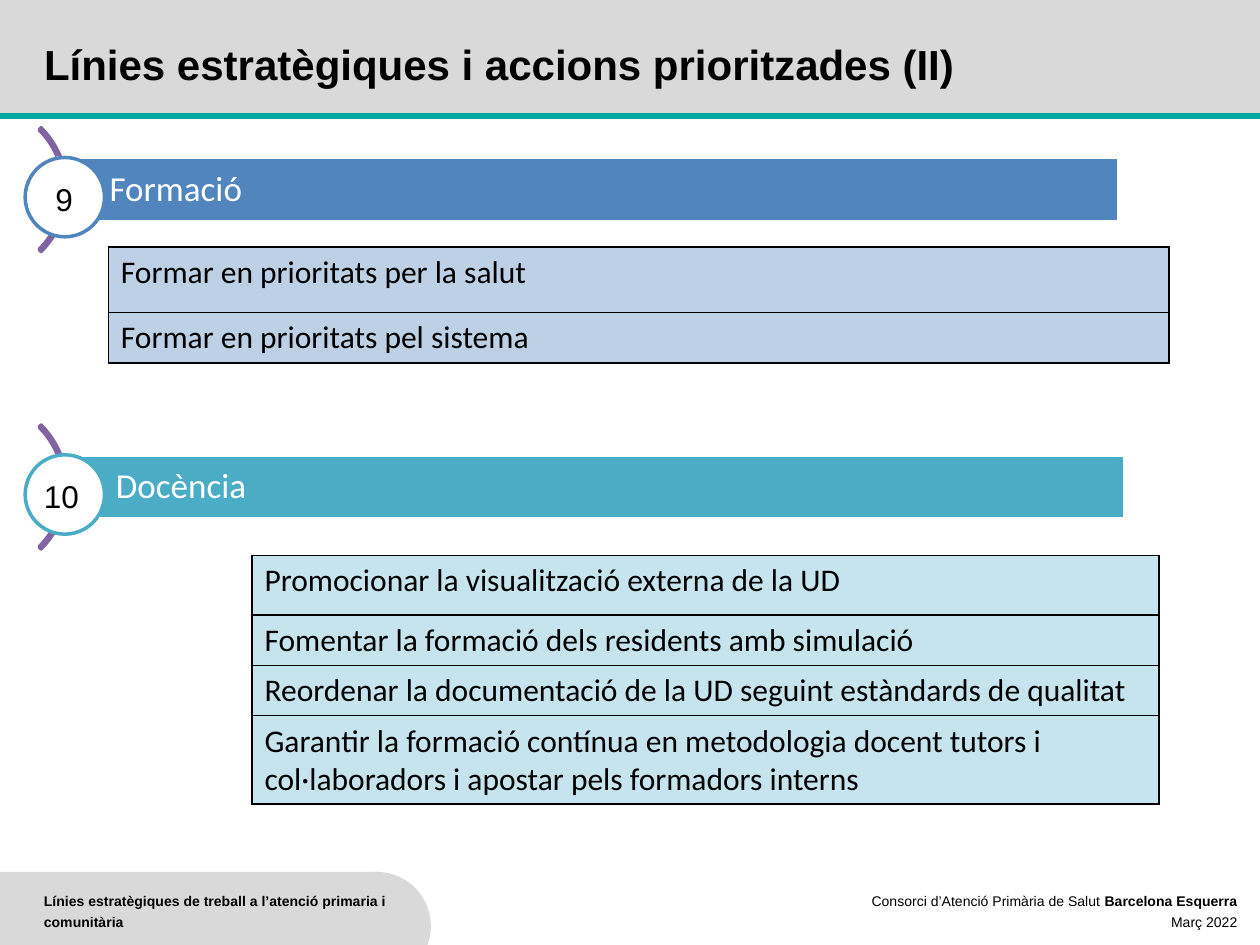
from lxml import etree
from pptx import Presentation
from pptx.dml.color import RGBColor
from pptx.enum.shapes import MSO_CONNECTOR, MSO_SHAPE
from pptx.enum.text import MSO_ANCHOR, MSO_AUTO_SIZE, PP_ALIGN
from pptx.oxml.ns import qn
from pptx.util import Inches, Pt

RECTANGLE, OVAL, BLOCK_ARC = MSO_SHAPE.RECTANGLE, MSO_SHAPE.OVAL, MSO_SHAPE.BLOCK_ARC
STRAIGHT = MSO_CONNECTOR.STRAIGHT
TOP, MIDDLE = MSO_ANCHOR.TOP, MSO_ANCHOR.MIDDLE
LEFT, RIGHT = PP_ALIGN.LEFT, PP_ALIGN.RIGHT

TITLE = "Línies estratègiques i accions prioritzades (II)"
FOOTER_LEFT = [[("Línies estratègiques de treball a l’atenció primaria i comunitària", True)]]
FOOTER_RIGHT = [
    [("Consorci d’Atenció Primària de Salut ", False), ("Barcelona Esquerra", True)],
    [("Març 2022", False)],
]
SECTIONS = [
    {
        "number": "9", "number_left": 0.34, "heading": "Formació",
        "color": "5185BD", "tint": "BCD0E6", "bar": (0.46, 1.25),
        "table": (0.86, 1.96, 8.42),
        "actions": [
            ("Formar en prioritats per la salut", 0.52),
            ("Formar en prioritats pel sistema", 0.4),
        ],
    },
    {
        "number": "10", "number_left": 0.25, "heading": "Docència",
        "color": "4BACC6", "tint": "C5E4ED", "bar": (0.51, 3.61),
        "table": (2, 4.41, 7.2),
        "actions": [
            ("Promocionar la visualització externa de la UD", 0.47),
            ("Fomentar la formació dels residents amb simulació", 0.4),
            ("Reordenar la documentació de la UD seguint estàndards de qualitat", 0.4),
            ("Garantir la formació contínua en metodologia docent tutors i "
             "col·laboradors i apostar pels formadors interns", 0.7),
        ],
    },
]
THEME = {
    "gray": "D9D9D9", "teal": "00AA9E", "purple": "8064A2",
    "white": "FFFFFF", "black": "000000",
    "base_font": "Arial", "body_font": "Calibri",
    "title": 24, "heading": 20, "body": 18, "footer": 8,
}
BAR_SIZE = (8.42, 0.51)
CIRCLE_LEFT, CIRCLE_SIZE = 0.2, 0.63
ARC_LEFT, ARC_RISE, ARC_SIZE = -0.86, 0.44, 1.39


def rgb(color):
    return RGBColor.from_string(color)


def inches(*lengths):
    return [Inches(length) for length in lengths]


def style_run(run, size, font, color=THEME["black"], bold=False):
    run.font.size = Pt(size)
    run.font.name = font
    run.font.color.rgb = rgb(color)
    run.font.bold = bold


def add_shape(slide, kind, box, fill=None, line=None):
    shape = slide.shapes.add_shape(kind, *inches(*box))
    shape.shadow.inherit = False
    if fill:
        shape.fill.solid()
        shape.fill.fore_color.rgb = rgb(fill)
    else:
        shape.fill.background()
    if line:
        shape.line.color.rgb = rgb(line)
        shape.line.width = Pt(2)
    else:
        shape.line.fill.background()
    return shape


def add_text(slide, box, paragraphs, size, alignment=LEFT, spacing=None):
    frame = slide.shapes.add_textbox(*inches(*box)).text_frame
    frame.word_wrap = True
    for index, parts in enumerate(paragraphs):
        paragraph = frame.add_paragraph() if index else frame.paragraphs[0]
        paragraph.alignment = alignment
        paragraph.line_spacing = spacing
        for text, bold in parts:
            run = paragraph.add_run()
            run.text = text
            style_run(run, size, THEME["base_font"], bold=bold)


def add_borders(cell):
    properties = cell._tc.get_or_add_tcPr()
    for index, side in enumerate(("a:lnL", "a:lnR", "a:lnT", "a:lnB")):
        border = etree.Element(qn(side), w=str(Pt(1)))
        fill = etree.SubElement(border, qn("a:solidFill"))
        etree.SubElement(fill, qn("a:srgbClr"), val=THEME["black"])
        properties.insert(index, border)


def add_actions(slide, section):
    left, top, width = section["table"]
    actions = section["actions"]
    height = sum(row_height for _, row_height in actions)
    table = slide.shapes.add_table(len(actions), 1, *inches(left, top, width, height)).table
    table.first_row = table.horz_banding = False
    for index, (text, row_height) in enumerate(actions):
        table.rows[index].height = Inches(row_height)
        cell = table.cell(index, 0)
        cell.text_frame.text = text
        style_run(cell.text_frame.paragraphs[0].runs[0], THEME["body"], THEME["body_font"])
        cell.fill.solid()
        cell.fill.fore_color.rgb = rgb(section["tint"])
        add_borders(cell)


def add_section(slide, section):
    left, top = section["bar"]
    arc = add_shape(slide, BLOCK_ARC, (ARC_LEFT, top - ARC_RISE, ARC_SIZE, ARC_SIZE),
                    line=THEME["purple"])
    for index, value in enumerate((189, 27, 0.017)):
        arc.adjustments[index] = value

    bar = add_shape(slide, RECTANGLE, (left, top, *BAR_SIZE), section["color"], THEME["white"])
    frame = bar.text_frame
    frame.text = section["heading"]
    frame.vertical_anchor = MIDDLE
    frame.margin_left = Inches(0.41)
    frame.margin_right = frame.margin_top = frame.margin_bottom = Inches(0.06)
    paragraph = frame.paragraphs[0]
    paragraph.alignment = LEFT
    paragraph.line_spacing = 0.9
    paragraph.space_after = Pt(7)
    style_run(paragraph.runs[0], THEME["heading"], THEME["body_font"], THEME["white"])

    add_shape(slide, OVAL, (CIRCLE_LEFT, top, CIRCLE_SIZE, CIRCLE_SIZE),
              THEME["white"], section["color"])
    number_left = section["number_left"]
    add_text(slide, (number_left, top + 0.13, 0.75 - number_left, 0.4),
             [[(section["number"], False)]], THEME["body"])
    add_actions(slide, section)


def add_frame(slide):
    for kind, box in (
        (RECTANGLE, (0, 6.92, 3.02, 0.72)),
        (OVAL, (2.56, 6.92, 0.86, 0.86)),
        (RECTANGLE, (0, 0, 10, 0.92)),
    ):
        add_shape(slide, kind, box, THEME["gray"])
    rule = slide.shapes.add_connector(STRAIGHT, *inches(0, 0.92, 10, 0.92))
    rule.line.color.rgb = rgb(THEME["teal"])
    rule.line.width = Pt(3)
    etree.SubElement(rule._element.spPr, qn("a:effectLst"))
    add_text(slide, (0.25, 7, 3.02, 0.47), FOOTER_LEFT, THEME["footer"], spacing=Pt(12))
    add_text(slide, (6.75, 7, 3.17, 0.5), FOOTER_RIGHT, THEME["footer"], RIGHT, Pt(12))


def add_title(slide):
    title = slide.shapes.title
    title.left, title.top, title.width, title.height = inches(0.25, 0.35, 8.53, 0.41)
    frame = title.text_frame
    frame.text = TITLE
    frame.word_wrap = True
    frame.auto_size = MSO_AUTO_SIZE.NONE
    frame.vertical_anchor = TOP
    paragraph = frame.paragraphs[0]
    paragraph.alignment = LEFT
    paragraph.line_spacing = Pt(22)
    style_run(paragraph.runs[0], THEME["title"], THEME["base_font"], bold=True)
    title._element.getparent().append(title._element)


def main():
    presentation = Presentation()
    presentation.slide_width, presentation.slide_height = inches(10, 7.5)
    slide = presentation.slides.add_slide(presentation.slide_layouts[5])
    add_frame(slide)
    add_title(slide)
    for section in SECTIONS:
        add_section(slide, section)
    presentation.save("out.pptx")


if __name__ == "__main__":
    main()
